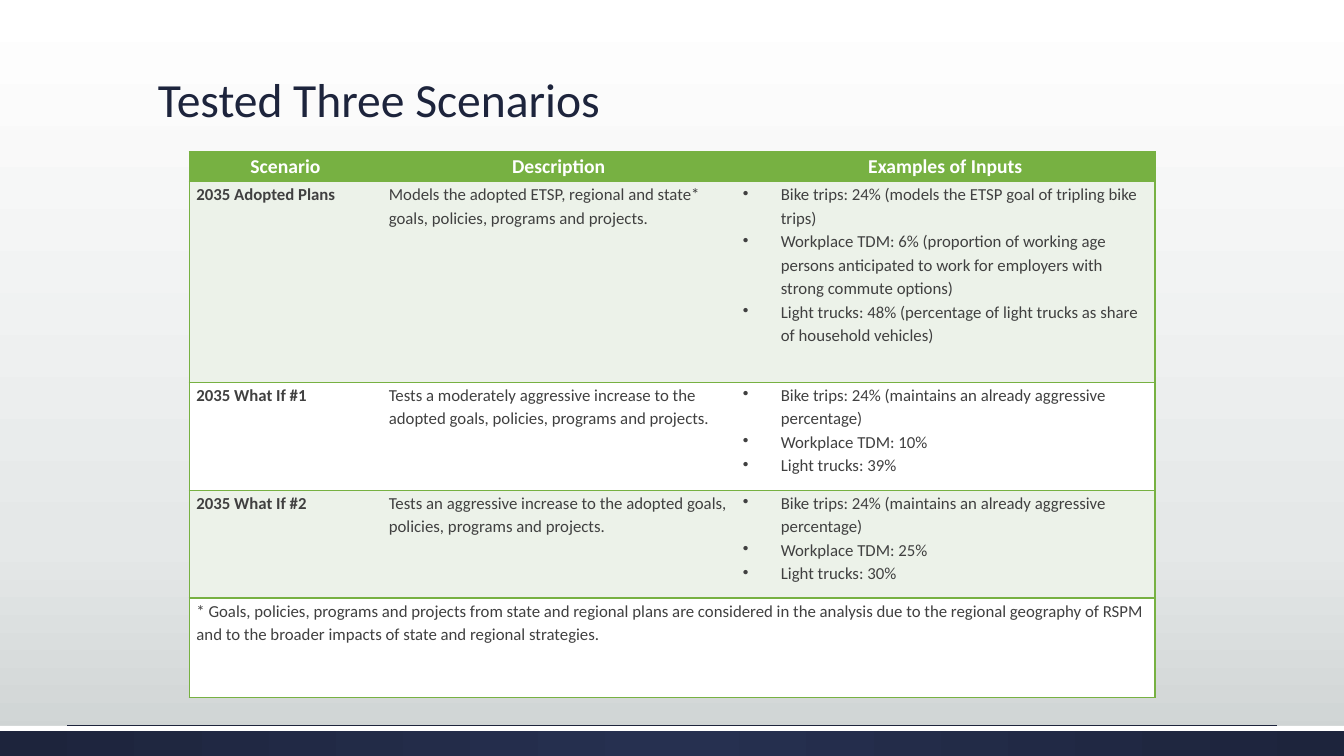
from lxml import etree
from pptx import Presentation
from pptx.dml.color import RGBColor
from pptx.enum.shapes import MSO_CONNECTOR, MSO_SHAPE
from pptx.enum.text import MSO_ANCHOR, PP_ALIGN
from pptx.oxml.ns import qn
from pptx.util import Cm, Pt

RECTANGLE = MSO_SHAPE.RECTANGLE
STRAIGHT = MSO_CONNECTOR.STRAIGHT
BOTTOM = MSO_ANCHOR.BOTTOM
LEFT, CENTER = PP_ALIGN.LEFT, PP_ALIGN.CENTER

TITLE = "Tested Three Scenarios"
HEADERS = ("Scenario", "Description", "Examples of Inputs")
SCENARIOS = (
    ("2035 Adopted Plans",
     "Models the adopted ETSP, regional and state* goals, policies, programs and projects.",
     ("Bike trips: 24% (models the ETSP goal of tripling bike trips)",
      "Workplace TDM: 6% (proportion of working age persons anticipated to work "
      "for employers with strong commute options)",
      "Light trucks: 48% (percentage of light trucks as share of household vehicles)")),
    ("2035 What If #1",
     "Tests a moderately aggressive increase to the adopted goals, policies, "
     "programs and projects.",
     ("Bike trips: 24% (maintains an already aggressive percentage)",
      "Workplace TDM: 10%",
      "Light trucks: 39%")),
    ("2035 What If #2",
     "Tests an aggressive increase to the adopted goals, policies, programs and projects.",
     ("Bike trips: 24% (maintains an already aggressive percentage)",
      "Workplace TDM: 25%",
      "Light trucks: 30%")),
)
FOOTNOTE = ("* Goals, policies, programs and projects from state and regional plans are "
            "considered in the analysis due to the regional geography of RSPM and to the "
            "broader impacts of state and regional strategies.")

THEME = {
    "font": "Calibri",
    "title_size": 34, "header_size": 14, "body_size": 12,
    "navy": "1D243C", "green": "77B142", "band": "ECF2E9",
    "white": "FFFFFF", "text": "404040",
    "background": ((0, "FFFFFF"), (72, "E5E8E8"), (100, "CDD2D2")),
    "footer": ((0, "1D243C"), (50, "263050"), (100, "1D243C")),
}

SLIDE_W, SLIDE_H = Cm(33.87), Cm(19.05)
FOOTER_TOP = Cm(18.29)
TABLE_LEFT, TABLE_TOP = Cm(4.77), Cm(3.82)
COLUMN_WIDTHS = (Cm(4.85), Cm(8.92), Cm(10.57))
ROW_HEIGHTS = (Cm(0.76), Cm(5.05), Cm(2.72), Cm(2.72), Cm(2.51))
CELL_MARGIN = Cm(0.18)
BULLET_INDENT = Cm(0.96)


def rgb(name):
    return RGBColor.from_string(THEME[name])


def set_gradient(properties, stops, angle):
    """Swap the solid fill in a properties element for a linear gradient."""
    gradient = etree.Element(qn("a:gradFill"), rotWithShape="1")
    stop_list = etree.SubElement(gradient, qn("a:gsLst"))
    for percent, color in stops:
        stop = etree.SubElement(stop_list, qn("a:gs"), pos=str(percent * 1000))
        etree.SubElement(stop, qn("a:srgbClr"), val=color)
    etree.SubElement(gradient, qn("a:lin"), ang=str(angle * 60000), scaled="0")
    properties.replace(properties.find(qn("a:solidFill")), gradient)


def add_bar(slide, height):
    bar = slide.shapes.add_shape(RECTANGLE, 0, FOOTER_TOP, SLIDE_W, height)
    bar.shadow.inherit = False
    bar.fill.solid()
    bar.fill.fore_color.rgb = rgb("white")
    bar.line.fill.background()
    return bar


def add_backdrop(slide):
    slide.background.fill.solid()
    set_gradient(slide.element.find(".//" + qn("p:bgPr")), THEME["background"], 90)
    footer = add_bar(slide, SLIDE_H - FOOTER_TOP)
    set_gradient(footer.element.spPr, THEME["footer"], 0)
    add_bar(slide, Cm(0.13))
    rule = slide.shapes.add_connector(STRAIGHT, Cm(1.69), Cm(18.27), Cm(32.17), Cm(18.27))
    rule.line.color.rgb = rgb("navy")
    rule.line.width = Pt(0.75)
    etree.SubElement(rule.element.spPr, qn("a:effectLst"))


def style(paragraph, size, color, bold=False, align=LEFT, spacing=1.15):
    paragraph.alignment = align
    paragraph.line_spacing = spacing
    font = paragraph.font
    font.name, font.size, font.bold = THEME["font"], Pt(THEME[size]), bold
    font.color.rgb = rgb(color)


def add_title(slide):
    box = slide.shapes.add_textbox(Cm(3.73), Cm(0.84), Cm(26.42), Cm(2.51))
    frame = box.text_frame
    frame.word_wrap = True
    frame.vertical_anchor = BOTTOM
    frame.text = TITLE
    style(frame.paragraphs[0], "title_size", "navy", spacing=0.9)


def add_bullet(paragraph):
    properties = paragraph._p.get_or_add_pPr()
    properties.set("marL", str(BULLET_INDENT))
    properties.set("indent", str(-BULLET_INDENT))
    bullet = etree.Element(qn("a:buChar"), char="•")
    following = properties.find(qn("a:defRPr"))
    if following is None:
        properties.append(bullet)
    else:
        following.addprevious(bullet)


def set_borders(cell, sides):
    """Draw green lines on the named sides (of L, R, T, B) and clear the others."""
    properties = cell._tc.get_or_add_tcPr()
    for position, side in enumerate("LRTB"):
        line = etree.Element(qn("a:ln" + side), w=str(Pt(1)))
        if side in sides:
            fill = etree.SubElement(line, qn("a:solidFill"))
            etree.SubElement(fill, qn("a:srgbClr"), val=THEME["green"])
        else:
            etree.SubElement(line, qn("a:noFill"))
        properties.insert(position, line)


def fill_cell(cell, lines, fill, **text_style):
    cell.margin_left = cell.margin_right = CELL_MARGIN
    cell.margin_top = cell.margin_bottom = 0
    cell.fill.solid()
    cell.fill.fore_color.rgb = rgb(fill)
    cell.text = "\n".join(lines)
    for paragraph in cell.text_frame.paragraphs:
        style(paragraph, **text_style)


def add_scenario_table(slide):
    table = slide.shapes.add_table(
        len(ROW_HEIGHTS), len(COLUMN_WIDTHS), TABLE_LEFT, TABLE_TOP,
        sum(COLUMN_WIDTHS), sum(ROW_HEIGHTS)).table
    table.horz_banding = False
    for column, width in zip(table.columns, COLUMN_WIDTHS):
        column.width = width
    for row, height in zip(table.rows, ROW_HEIGHTS):
        row.height = height

    for column, header in enumerate(HEADERS):
        fill_cell(table.cell(0, column), [header], "green", size="header_size",
                  color="white", bold=True, align=CENTER)
    for row, (scenario, description, inputs) in enumerate(SCENARIOS, start=1):
        fill = "band" if row % 2 else "white"
        for column, lines in enumerate(([scenario], [description], inputs)):
            fill_cell(table.cell(row, column), lines, fill, size="body_size",
                      color="text", bold=column == 0)
        for paragraph in table.cell(row, 2).text_frame.paragraphs:
            add_bullet(paragraph)

    last_row, last_column = len(ROW_HEIGHTS) - 1, len(COLUMN_WIDTHS) - 1
    footnote = table.cell(last_row, 0)
    footnote.merge(table.cell(last_row, last_column))
    fill_cell(footnote, [FOOTNOTE], "white", size="body_size", color="text")
    footnote.text_frame.paragraphs[0].space_after = Pt(10)

    for row in range(last_row + 1):
        for column in range(last_column + 1):
            cell = table.cell(row, column)
            left = "L" if column == 0 else ""
            right = "R" if column == last_column or cell.is_merge_origin else ""
            set_borders(cell, "TB" + left + right)


def main():
    deck = Presentation()
    deck.slide_width, deck.slide_height = SLIDE_W, SLIDE_H
    slide = deck.slides.add_slide(deck.slide_layouts[6])
    add_backdrop(slide)
    add_title(slide)
    add_scenario_table(slide)
    deck.save("out.pptx")


if __name__ == "__main__":
    main()
